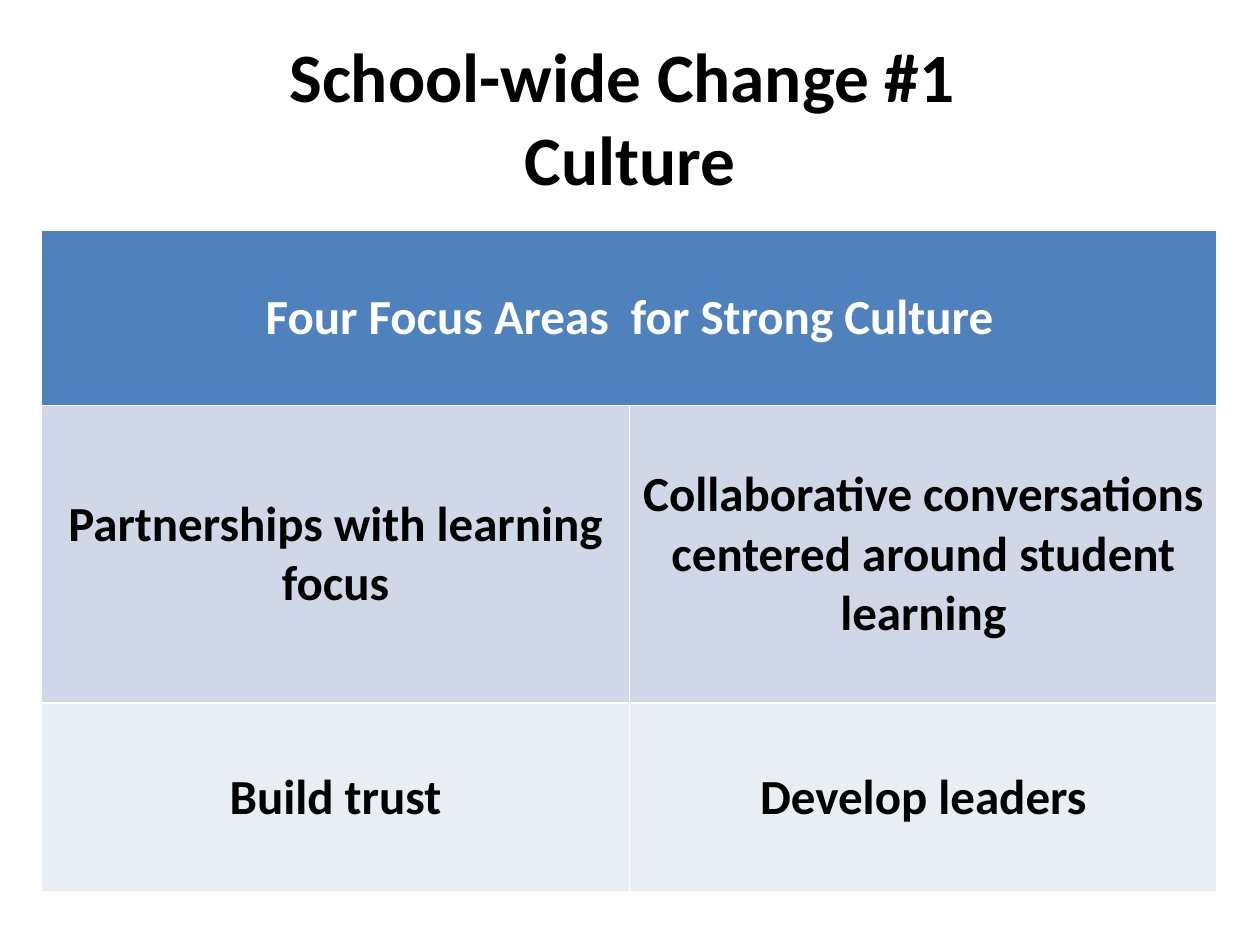
from dataclasses import dataclass

from pptx import Presentation
from pptx.dml.color import RGBColor
from pptx.enum.text import MSO_ANCHOR, PP_ALIGN
from pptx.util import Inches, Pt

BLACK = RGBColor(0x00, 0x00, 0x00)
WHITE = RGBColor(0xFF, 0xFF, 0xFF)
BLUE = RGBColor(0x4F, 0x81, 0xBD)
MID_BLUE = RGBColor(0xD0, 0xD8, 0xE8)
PALE_BLUE = RGBColor(0xE9, 0xED, 0xF4)


@dataclass(frozen=True)
class Row:
    """One table row; a single text spans both columns."""
    height: float
    fill: RGBColor
    color: RGBColor
    texts: tuple[str, ...]


ROWS = (
    Row(1.39, BLUE, WHITE, ("Four Focus Areas  for Strong Culture",)),
    Row(2.36, MID_BLUE, BLACK, ("Partnerships with learning focus",
                                "Collaborative conversations centered around student learning")),
    Row(1.5, PALE_BLUE, BLACK, ("Build trust", "Develop leaders")),
)


def write_text(tf, text: str, *, size: float, color: RGBColor) -> None:
    """Write centred bold text, with a line break at each newline."""
    p = tf.paragraphs[0]
    p.alignment = PP_ALIGN.CENTER
    for i, line in enumerate(text.split("\n")):
        if i:
            p.add_line_break()
        r = p.add_run()
        r.text = line
        r.font.name = "Calibri"
        r.font.size = Pt(size)
        r.font.bold = True
        r.font.color.rgb = color


def add_title(s, text: str) -> None:
    """Add the slide heading."""
    sp = s.shapes.add_textbox(Inches(0.5), Inches(0.3), Inches(9), Inches(1.25))
    tf = sp.text_frame
    tf.word_wrap = True
    tf.vertical_anchor = MSO_ANCHOR.MIDDLE
    write_text(tf, text, size=39.6, color=BLACK)


def add_focus_table(s, rows: tuple[Row, ...]) -> None:
    """Add the table of focus areas."""
    height = sum(row.height for row in rows)
    table = s.shapes.add_table(len(rows), 2, Inches(0.33), Inches(1.83),
                               Inches(9.33), Inches(height)).table
    for i, row in enumerate(rows):
        table.rows[i].height = Inches(row.height)
        if len(row.texts) == 1:
            table.cell(i, 0).merge(table.cell(i, 1))
        for j, text in enumerate(row.texts):
            cell = table.cell(i, j)
            cell.fill.solid()
            cell.fill.fore_color.rgb = row.fill
            cell.vertical_anchor = MSO_ANCHOR.MIDDLE
            write_text(cell.text_frame, text, size=28, color=row.color)


def main() -> None:
    """Build and save the slide."""
    prs = Presentation()
    prs.slide_width, prs.slide_height = Inches(10), Inches(7.5)
    s = prs.slides.add_slide(prs.slide_layouts[6])
    add_title(s, "School-wide Change #1 \nCulture")
    add_focus_table(s, ROWS)
    prs.save("out.pptx")


if __name__ == "__main__":
    main()
